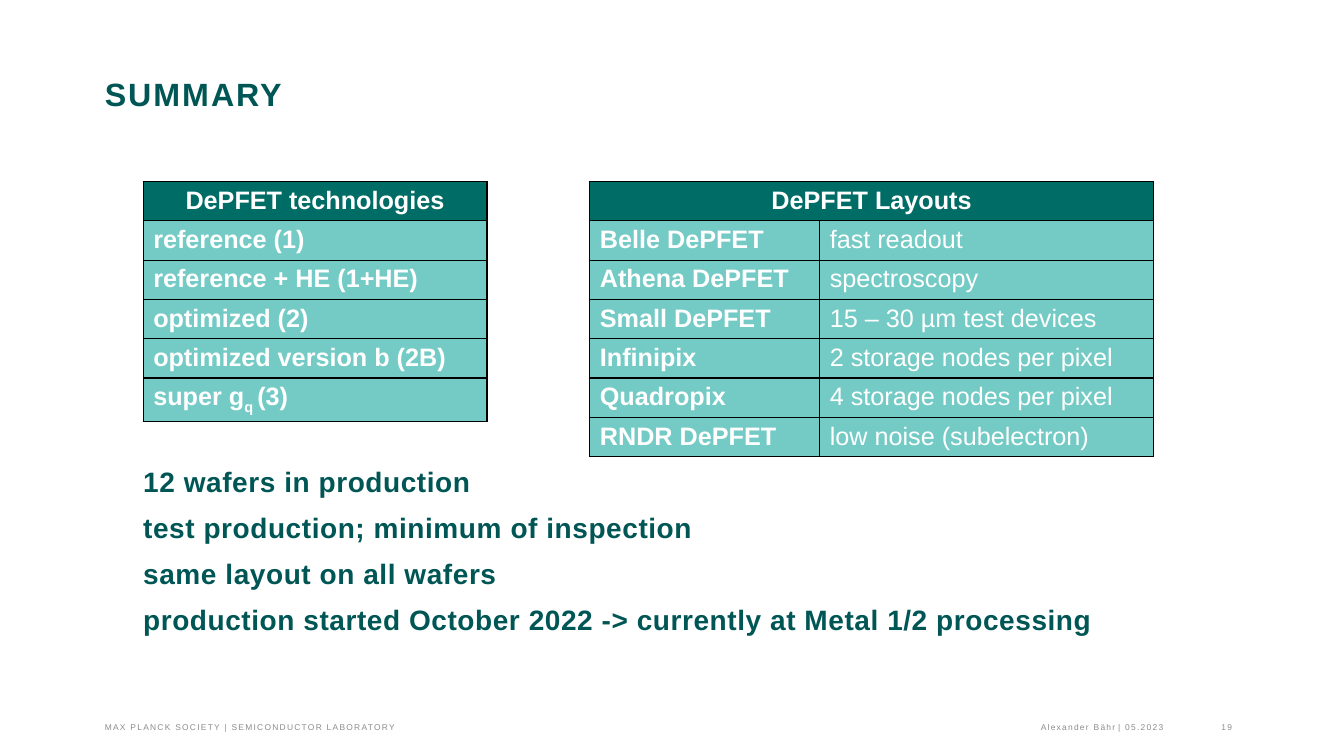
from lxml.etree import SubElement
from pptx import Presentation
from pptx.dml.color import RGBColor
from pptx.enum.text import MSO_ANCHOR as ANCHOR, PP_ALIGN as ALIGN
from pptx.oxml.ns import qn
from pptx.util import Inches, Pt

DARK_TEAL = RGBColor(0x00, 0x55, 0x55)
HEADER_TEAL = RGBColor(0x00, 0x6C, 0x66)
LIGHT_TEAL = RGBColor(0x74, 0xCA, 0xC5)
WHITE = RGBColor(0xFF, 0xFF, 0xFF)
GREY = RGBColor(0x8C, 0x8C, 0x8C)
BLACK = RGBColor(0x00, 0x00, 0x00)
ROW_HEIGHT = 0.38


def write(paragraph, text, size=18, color=WHITE, bold=False, align=ALIGN.LEFT,
          spacing=0, baseline=0):
    paragraph.alignment = align
    run = paragraph.add_run()
    run.text = text
    run.font.name = "Arial"
    run.font.size = Pt(size)
    run.font.bold = bold
    run.font.color.rgb = color
    properties = run._r.get_or_add_rPr()
    if spacing:
        properties.set("spc", str(round(spacing * 100)))
    if baseline:
        properties.set("baseline", str(baseline * 1000))


def add_frame(left, top, width, height, anchor=ANCHOR.TOP, wrap=True):
    box = slide.shapes.add_textbox(Inches(left), Inches(top), Inches(width), Inches(height))
    frame = box.text_frame
    frame.word_wrap = wrap
    frame.vertical_anchor = anchor
    frame.margin_left = frame.margin_right = frame.margin_top = frame.margin_bottom = 0
    return frame


prs = Presentation()
prs.slide_width, prs.slide_height = Inches(13.33), Inches(7.5)
slide = prs.slides.add_slide(prs.slide_layouts[6])

# Title
title = add_frame(1.04, 0.76, 11.26, 1.05).paragraphs[0]
title.line_spacing = Pt(26)
write(title, "SUMMARY", size=23, color=DARK_TEAL, bold=True, spacing=1.4)

# Tables: a cell is a list of (text, baseline) pieces
technologies = [
    ["DePFET technologies"],
    ["reference (1)"],
    ["reference + HE (1+HE)"],
    ["optimized (2)"],
    ["optimized version b (2B)"],
    [[("super g", 0), ("q ", -25), ("(3)", 0)]],
]
layouts = [
    ["DePFET Layouts"],
    ["Belle DePFET", "fast readout"],
    ["Athena DePFET", "spectroscopy"],
    ["Small DePFET", "15 – 30 µm test devices"],
    ["Infinipix", "2 storage nodes per pixel"],
    ["Quadropix", "4 storage nodes per pixel"],
    ["RNDR DePFET", "low noise (subelectron)"],
]
for left, widths, rows in [(5.85, [2.28, 3.31], layouts), (1.42, [3.41], technologies)]:
    table = slide.shapes.add_table(
        len(rows), len(widths), Inches(left), Inches(1.8),
        Inches(sum(widths)), Inches(ROW_HEIGHT * len(rows))).table
    table.first_row = table.horz_banding = False
    for column, width in zip(table.columns, widths):
        column.width = Inches(width)
    if len(widths) > 1:
        table.cell(0, 0).merge(table.cell(0, len(widths) - 1))

    for r, row in enumerate(rows):
        table.rows[r].height = Inches(ROW_HEIGHT)
        for c in range(len(widths)):
            cell = table.cell(r, c)
            cell.margin_top, cell.margin_bottom = Inches(0.05), Inches(0.04)
            # Borders come before the fill in the cell properties
            for side in ("lnL", "lnR", "lnT", "lnB"):
                border = SubElement(cell._tc.get_or_add_tcPr(), qn(f"a:{side}"), w=str(Pt(1)))
                line_fill = SubElement(border, qn("a:solidFill"))
                SubElement(line_fill, qn("a:srgbClr"), val=str(BLACK))
            cell.fill.solid()
            cell.fill.fore_color.rgb = LIGHT_TEAL if r else HEADER_TEAL
            if c < len(row):
                pieces = [(row[c], 0)] if isinstance(row[c], str) else row[c]
                for text, baseline in pieces:
                    write(cell.text_frame.paragraphs[0], text, bold=c == 0,
                          align=ALIGN.LEFT if r else ALIGN.CENTER, baseline=baseline)

# Production status
status = add_frame(1.42, 4.62, 10.88, 2.26)
for i, text in enumerate([
    "12 wafers in production",
    "test production; minimum of inspection",
    "same layout on all wafers",
    "production started October 2022 -> currently at Metal 1/2 processing",
]):
    paragraph = status.add_paragraph() if i else status.paragraphs[0]
    paragraph.line_spacing = Pt(23)
    if i:
        paragraph.space_before = Pt(10)
    write(paragraph, text, size=20, color=DARK_TEAL, bold=True, spacing=0.4)

# Footer
for left, width, text, align, wrap in [
    (1.04, 2.93, "MAX PLANCK SOCIETY | SEMICONDUCTOR LABORATORY", ALIGN.LEFT, False),
    (3.97, 7.09, "Alexander Bähr", ALIGN.RIGHT, True),
    (11.09, 0.05, "|", ALIGN.LEFT, True),
    (11.16, 0.61, "05.2023", ALIGN.LEFT, True),
    (11.86, 0.36, "19", ALIGN.RIGHT, True),
]:
    footer = add_frame(left, 7.06, width, 0.2, anchor=ANCHOR.BOTTOM, wrap=wrap)
    write(footer.paragraphs[0], text, size=6, color=GREY, align=align, spacing=0.9)

prs.save("out.pptx")
